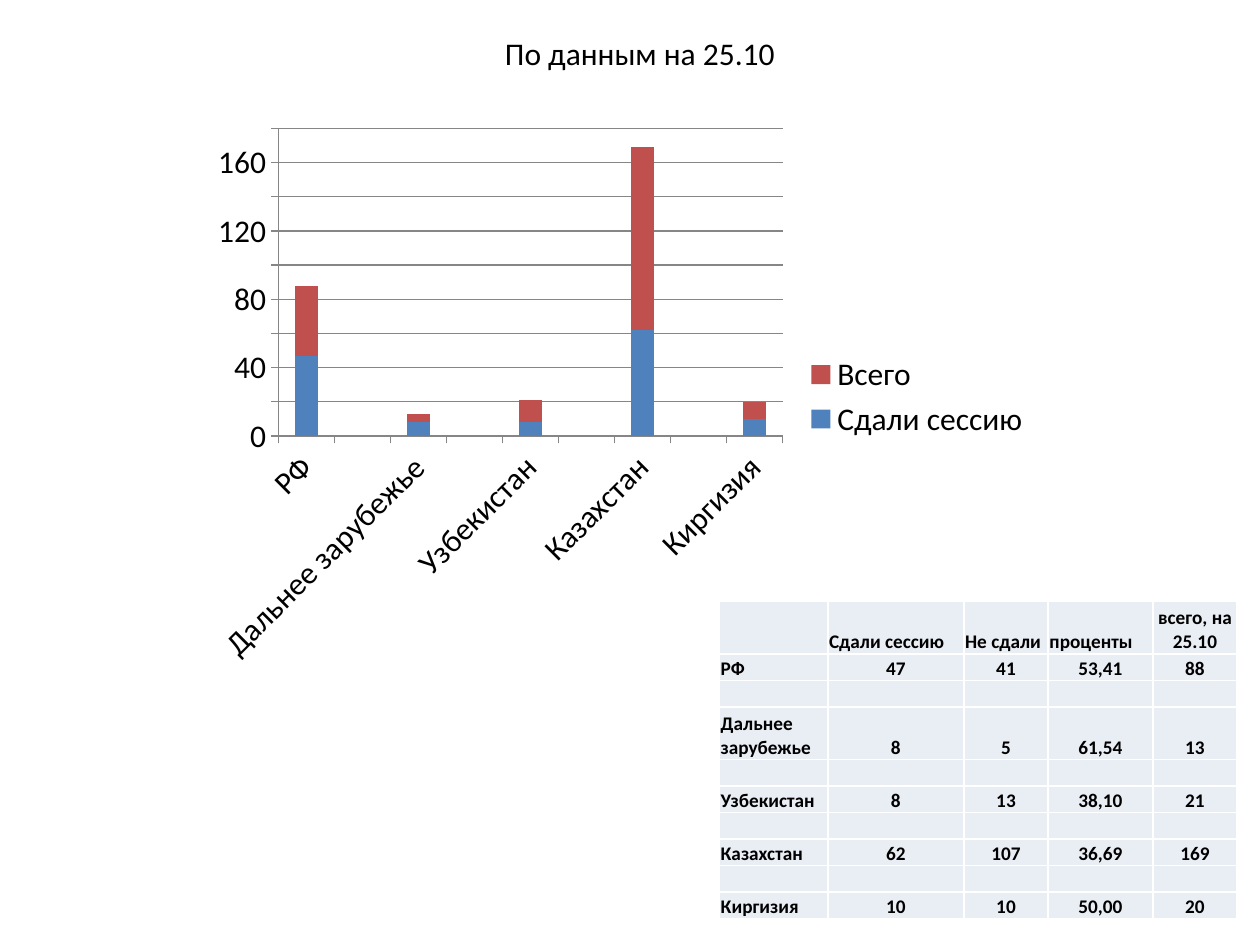
from dataclasses import dataclass

from lxml.etree import SubElement
from pptx import Presentation
from pptx.chart.data import CategoryChartData
from pptx.dml.color import RGBColor
from pptx.enum.chart import XL_CHART_TYPE, XL_LEGEND_POSITION, XL_TICK_MARK
from pptx.enum.text import MSO_ANCHOR, PP_ALIGN
from pptx.oxml import parse_xml
from pptx.oxml.ns import nsdecls, qn
from pptx.util import Inches, Pt


@dataclass(frozen=True)
class Theme:
    font: str = "Calibri"
    text: RGBColor = RGBColor(0x00, 0x00, 0x00)
    passed: RGBColor = RGBColor(0x4F, 0x81, 0xBD)
    total: RGBColor = RGBColor(0xC0, 0x50, 0x4D)
    axis: RGBColor = RGBColor(0x86, 0x86, 0x86)
    cell: RGBColor = RGBColor(0xE9, 0xED, 0xF4)
    border: str = "FFFFFF"
    body_size: Pt = Pt(18)
    table_size: Pt = Pt(11)


THEME = Theme()


def style_font(font, size, bold=False):
    font.name = THEME.font
    font.size = size
    font.bold = bold
    font.color.rgb = THEME.text


def add_borders(cell):
    properties = cell._tc.get_or_add_tcPr()
    for side in ("lnL", "lnR", "lnT", "lnB"):
        properties.append(parse_xml(
            f'<a:{side} {nsdecls("a")} w="{Pt(1)}"><a:solidFill>'
            f'<a:srgbClr val="{THEME.border}"/></a:solidFill></a:{side}>'))


# Country, passed, not passed, percentage, total
RESULTS = [
    ("РФ", 47, 41, "53,41", 88),
    ("Дальнее зарубежье", 8, 5, "61,54", 13),
    ("Узбекистан", 8, 13, "38,10", 21),
    ("Казахстан", 62, 107, "36,69", 169),
    ("Киргизия", 10, 10, "50,00", 20),
]
HEADER = ("", "Сдали сессию", "Не сдали", "проценты", "всего, на 25.10")

# An empty row stands between every two countries
spaced_results = [RESULTS[0]]
for result in RESULTS[1:]:
    spaced_results += [("", None, None, None, None), result]

prs = Presentation()
prs.slide_width = Inches(10)
prs.slide_height = Inches(7.5)
slide = prs.slides.add_slide(prs.slide_layouts[6])

# Chart
chart_data = CategoryChartData()
chart_data.categories = [result[0] for result in spaced_results]
chart_data.add_series("Сдали сессию", [result[1] for result in spaced_results])
chart_data.add_series("Всего", [result[2] for result in spaced_results])
chart = slide.shapes.add_chart(
    XL_CHART_TYPE.COLUMN_STACKED, Inches(1.61), Inches(0.93),
    Inches(6.67), Inches(4.44), chart_data).chart
style_font(chart.font, THEME.body_size)
chart.has_title = False
chart.has_legend = True
chart.legend.position = XL_LEGEND_POSITION.RIGHT
chart.legend.include_in_layout = False

columns = chart.plots[0]
columns.gap_width = 150
columns.overlap = 100
columns.vary_by_categories = False
for series, color in zip(columns.series, (THEME.passed, THEME.total)):
    series.format.fill.solid()
    series.format.fill.fore_color.rgb = color

countries, counts = chart.category_axis, chart.value_axis
counts.minimum_scale, counts.maximum_scale, counts.major_unit = 0, 180, 20
counts.has_major_gridlines = True
for axis in (countries, counts):
    axis.major_tick_mark = XL_TICK_MARK.OUTSIDE
    axis.format.line.color.rgb = THEME.axis
    style_font(axis.tick_labels.font, THEME.body_size)
counts.major_gridlines.format.line.color.rgb = THEME.axis
countries._element.find(qn("c:txPr")).find(qn("a:bodyPr")).set("rot", str(-45 * 60000))

plot_area = chart._chartSpace.chart.plotArea
for layout in plot_area.findall(qn("c:layout")):
    plot_area.remove(layout)
plot_area.insert(0, parse_xml(
    f'<c:layout {nsdecls("c")}><c:manualLayout><c:layoutTarget val="inner"/>'
    '<c:xMode val="edge"/><c:yMode val="edge"/><c:x val="0.09"/>'
    '<c:y val="0.02"/><c:w val="0.6"/><c:h val="0.55"/>'
    '</c:manualLayout></c:layout>'))

# Title
title = slide.shapes.add_textbox(
    Inches(0.28), Inches(0.22), Inches(9.72), Inches(0.4)).text_frame
title.word_wrap = True
title.margin_right = Inches(0.22)
heading = title.paragraphs[0]
heading.text = "По данным на 25.10"
heading.alignment = PP_ALIGN.CENTER
style_font(heading.font, THEME.body_size)

# Table
rows = [HEADER] + spaced_results
widths = (0.86, 1.08, 0.67, 0.83, 0.67)
table = slide.shapes.add_table(
    len(rows), len(widths), Inches(5.71), Inches(4.77),
    Inches(4.11), Inches(2.5)).table
table.first_row = False
table.horz_banding = False
for column, width in zip(table.columns, widths):
    column.width = Inches(width)

two_line_rows = (0, 3)
for r, values in enumerate(rows):
    table.rows[r].height = Inches(0.42 if r in two_line_rows else 0.21)
    for c, value in enumerate(values):
        cell = table.cell(r, c)
        add_borders(cell)
        cell.fill.solid()
        cell.fill.fore_color.rgb = THEME.cell
        cell.vertical_anchor = MSO_ANCHOR.BOTTOM
        cell.margin_left = cell.margin_right = cell.margin_top = Inches(0.01)
        cell.margin_bottom = 0
        entry = cell.text_frame.paragraphs[0]
        style_font(entry.font, THEME.table_size, bold=True)
        if value in ("", None):
            SubElement(entry._p, qn("a:endParaRPr"), sz=str(int(THEME.table_size.pt * 100)))
            continue
        entry.text = str(value)
        centered = c == len(widths) - 1 or (r > 0 and c > 0)
        entry.alignment = PP_ALIGN.CENTER if centered else PP_ALIGN.LEFT

prs.save("out.pptx")
